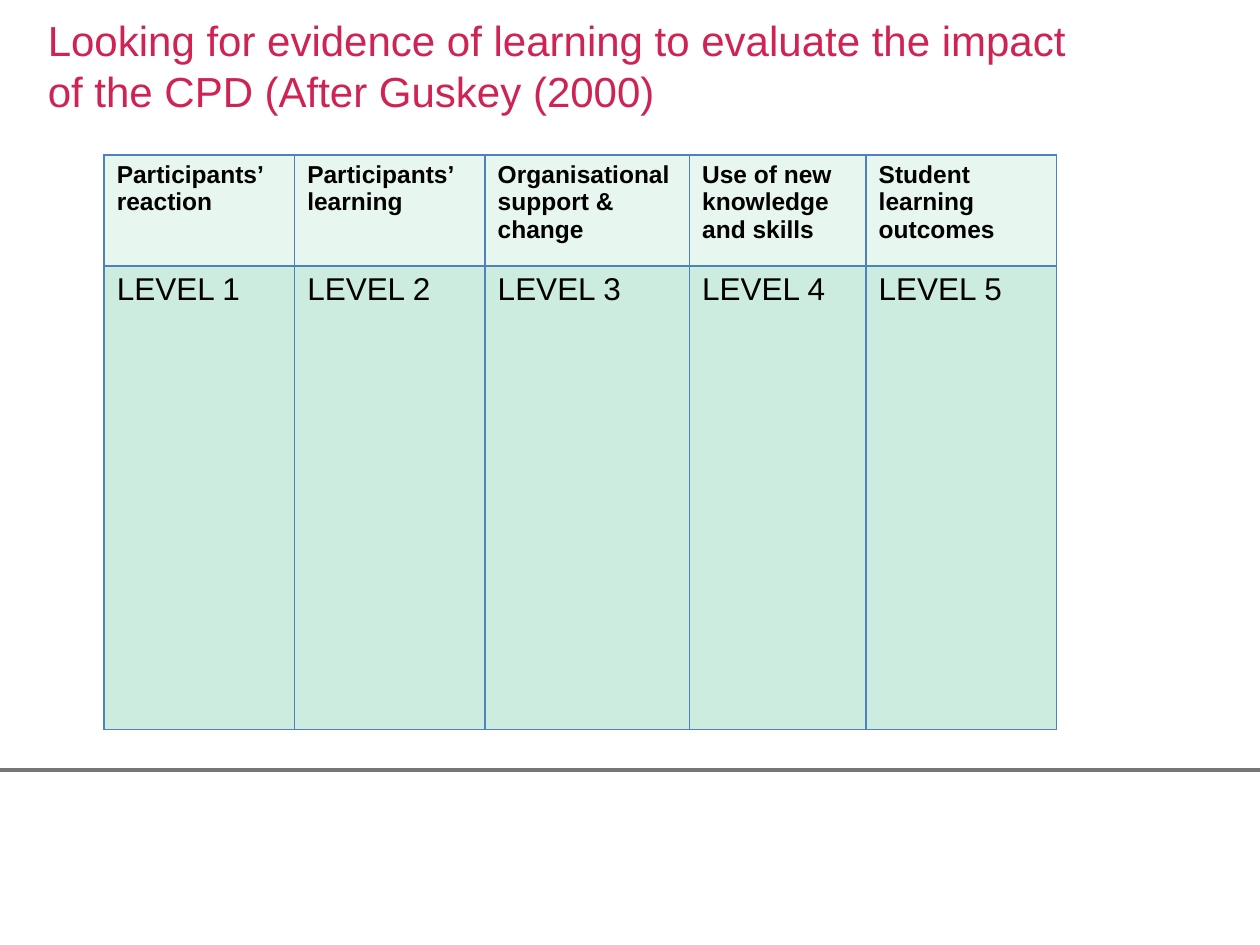
import pptx
import pptx.dml.color
import pptx.enum.shapes
import pptx.enum.text
import pptx.oxml
import pptx.oxml.ns
import pptx.util
from pptx.util import Cm

COLOURS = {
    "title": "CF2453",
    "text": "000000",
    "header": "E7F6EF",
    "body": "CBECDE",
    "border": "4F81BD",
    "rule": "747678",
}
FONT = "Arial"
COLUMNS = [
    ("Participants’ reaction", 3.84),
    ("Participants’ learning", 3.84),
    ("Organisational support & change", 4.12),
    ("Use of new knowledge and skills", 3.56),
    ("Student learning outcomes", 3.84),
]
ROW_HEIGHTS = [2.24, 9.35]


def add_run(paragraph, text, size, colour, bold=False):
    run = paragraph.add_run()
    run.text = text
    run.font.name = FONT
    run.font.size = pptx.util.Pt(size)
    run.font.bold = bold
    run.font.color.rgb = pptx.dml.color.RGBColor.from_string(COLOURS[colour])


def fill_cell(cell, colour):
    # Borders come before the fill in the cell properties
    properties = cell._tc.get_or_add_tcPr()
    for side in ("lnL", "lnR", "lnT", "lnB"):
        properties.append(pptx.oxml.parse_xml(
            f'<a:{side} {pptx.oxml.ns.nsdecls("a")} w="12700"><a:solidFill>'
            f'<a:srgbClr val="{COLOURS["border"]}"/></a:solidFill></a:{side}>'))
    cell.fill.solid()
    cell.fill.fore_color.rgb = pptx.dml.color.RGBColor.from_string(COLOURS[colour])


presentation = pptx.Presentation()
presentation.slide_width = Cm(25.4)
presentation.slide_height = Cm(19.05)
slide = presentation.slides.add_slide(presentation.slide_layouts[5])

# Rule across the foot of the slide
rule = slide.shapes.add_connector(
    pptx.enum.shapes.MSO_CONNECTOR.STRAIGHT, Cm(0), Cm(15.52), Cm(25.4), Cm(15.52))
rule.line.color.rgb = pptx.dml.color.RGBColor.from_string(COLOURS["rule"])
rule.line.width = pptx.util.Pt(2)
rule._element.spPr.append(
    pptx.oxml.parse_xml(f'<a:effectLst {pptx.oxml.ns.nsdecls("a")}/>'))

# Title
title = slide.shapes.title
title.left, title.top, title.width, title.height = Cm(0.71), Cm(-0.08), Cm(21.59), Cm(2.79)
title.text_frame.word_wrap = True
title.text_frame.auto_size = pptx.enum.text.MSO_AUTO_SIZE.NONE
title.text_frame.vertical_anchor = pptx.enum.text.MSO_ANCHOR.MIDDLE
paragraph = title.text_frame.paragraphs[0]
paragraph.alignment = pptx.enum.text.PP_ALIGN.LEFT
add_run(paragraph,
        "Looking for evidence of learning to evaluate the impact of the CPD (After Guskey (2000)",
        24, "title")

# Table of evaluation levels
table_width = sum(width for heading, width in COLUMNS)
table = slide.shapes.add_table(
    len(ROW_HEIGHTS), len(COLUMNS),
    Cm(2.1), Cm(3.12), Cm(table_width), Cm(sum(ROW_HEIGHTS))).table
for row, height in zip(table.rows, ROW_HEIGHTS):
    row.height = Cm(height)
for index, (heading, width) in enumerate(COLUMNS):
    table.columns[index].width = Cm(width)
    header_cell, level_cell = table.cell(0, index), table.cell(1, index)
    fill_cell(header_cell, "header")
    fill_cell(level_cell, "body")
    add_run(header_cell.text_frame.paragraphs[0], heading, 14, "text", bold=True)
    add_run(level_cell.text_frame.paragraphs[0], f"LEVEL {index + 1}", 18, "text")

presentation.save("out.pptx")
